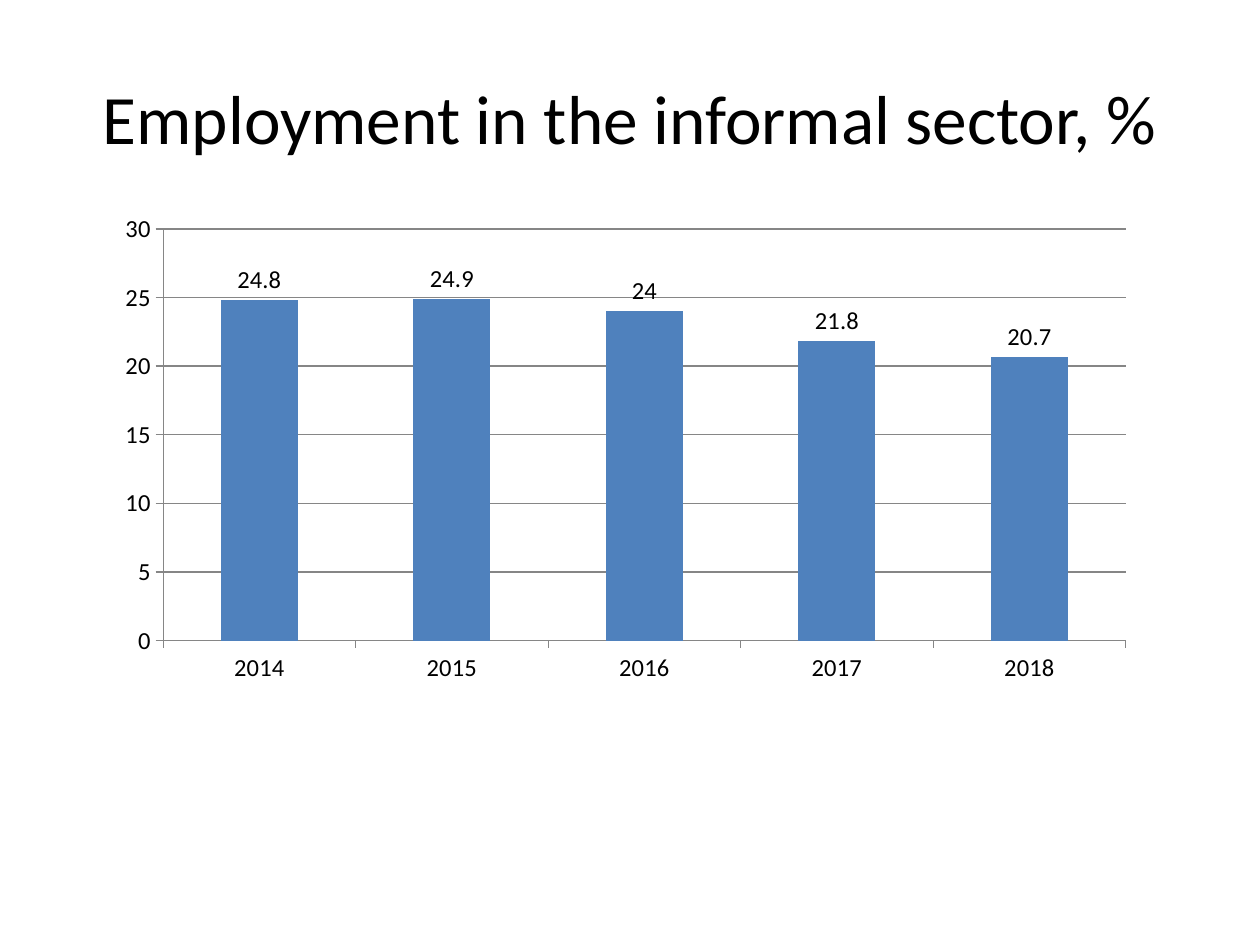
"""Build a slide with a column chart of informal sector employment."""
from pptx import Presentation
from pptx.chart.data import CategoryChartData
from pptx.dml.color import RGBColor
from pptx.enum.chart import XL_CHART_TYPE, XL_LABEL_POSITION, XL_TICK_MARK
from pptx.enum.text import MSO_ANCHOR, PP_ALIGN
from pptx.util import Inches, Pt

COLUMNS = XL_CHART_TYPE.COLUMN_CLUSTERED
LABELS_ABOVE = XL_LABEL_POSITION.OUTSIDE_END
TICK_OUTSIDE = XL_TICK_MARK.OUTSIDE
MIDDLE = MSO_ANCHOR.MIDDLE
CENTER = PP_ALIGN.CENTER

TITLE = "Employment in the informal sector, %"
EMPLOYMENT = {"2014": 24.8, "2015": 24.9, "2016": 24, "2017": 21.8, "2018": 20.7}
TITLE_BOX = (0.5, 0.3, 9, 1.25)
CHART_BOX = (0.83, 1.62, 8.27, 3.88)
FONT, BLACK, BLUE, GRAY = "Calibri", "000000", "4F81BD", "868686"


def color(value):
    return RGBColor.from_string(value)


def style_font(font, size):
    font.name = FONT
    font.size = Pt(size)
    font.color.rgb = color(BLACK)


def style_line(line):
    line.color.rgb = color(GRAY)
    line.width = Pt(0.75)


def add_title(slide):
    title = slide.shapes.title
    title.left, title.top, title.width, title.height = map(Inches, TITLE_BOX)
    frame = title.text_frame
    frame.text = TITLE
    frame.vertical_anchor = MIDDLE
    paragraph = frame.paragraphs[0]
    paragraph.alignment = CENTER
    style_font(paragraph.font, 39.6)


def add_employment_chart(slide):
    data = CategoryChartData()
    data.categories = list(EMPLOYMENT)
    data.add_series("Series 1", EMPLOYMENT.values())
    chart = slide.shapes.add_chart(COLUMNS, *map(Inches, CHART_BOX), data).chart
    chart.has_title = False
    chart.has_legend = False
    style_font(chart.font, 14)

    for axis in (chart.category_axis, chart.value_axis):
        axis.major_tick_mark = TICK_OUTSIDE
        style_font(axis.tick_labels.font, 14)
        style_line(axis.format.line)
    values = chart.value_axis
    values.minimum_scale, values.maximum_scale, values.major_unit = 0, 30, 5
    values.has_major_gridlines = True
    style_line(values.major_gridlines.format.line)

    plot = chart.plots[0]
    plot.gap_width = 150
    plot.vary_by_categories = False
    fill = plot.series[0].format.fill
    fill.solid()
    fill.fore_color.rgb = color(BLUE)
    plot.has_data_labels = True
    labels = plot.data_labels
    labels.show_value = True
    labels.position = LABELS_ABOVE
    style_font(labels.font, 14)


def main():
    deck = Presentation()
    deck.slide_width, deck.slide_height = Inches(10), Inches(7.5)
    slide = deck.slides.add_slide(deck.slide_layouts.get_by_name("Title Only"))
    add_title(slide)
    add_employment_chart(slide)
    deck.save("out.pptx")


if __name__ == "__main__":
    main()
